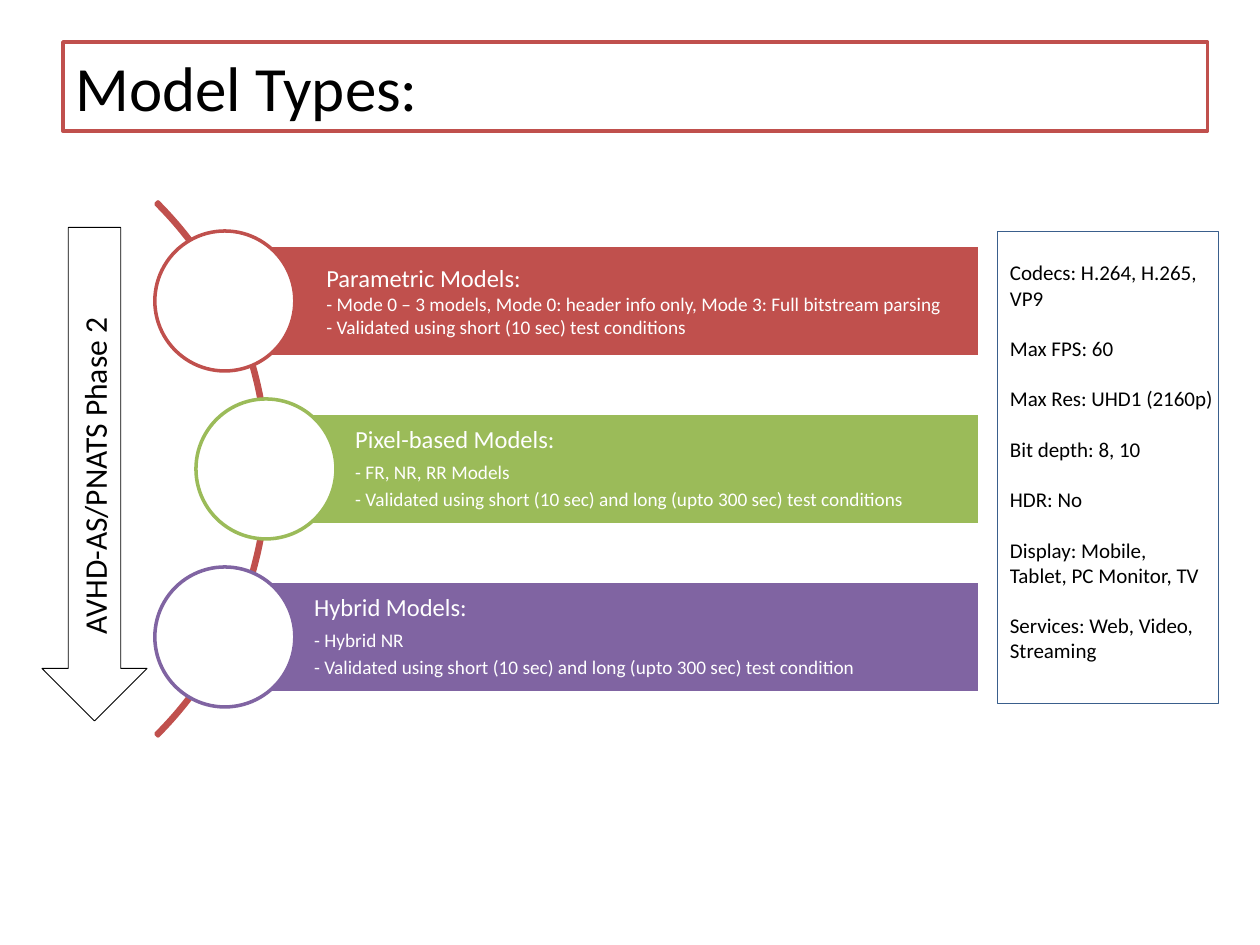
from dataclasses import dataclass

from pptx import Presentation
from pptx.dml.color import RGBColor
from pptx.enum import shapes, text
from pptx.util import Pt


@dataclass(frozen=True)
class Theme:
    font: str = "Calibri"
    black: str = "000000"
    white: str = "FFFFFF"
    red: str = "C0504D"
    green: str = "9BBB59"
    purple: str = "8064A2"
    navy: str = "3A5F8C"
    title: int = 36
    label: int = 18
    heading: int = 14
    facts: int = 12
    detail: int = 11


T = Theme()
SHAPE = shapes.MSO_SHAPE
ANCHOR = text.MSO_ANCHOR
ALIGN = text.PP_ALIGN


def style(sp, fill=None, line=None, width=2):
    """Set fill and outline; None means no fill."""
    if fill:
        sp.fill.solid()
        sp.fill.fore_color.rgb = RGBColor.from_string(fill)
    else:
        sp.fill.background()
    sp.line.color.rgb = RGBColor.from_string(line)
    sp.line.width = Pt(width)


def add_shape(s, kind, box, **look):
    sp = s.shapes.add_shape(kind, *map(Pt, box))
    sp.shadow.inherit = False
    style(sp, **look)
    return sp


def write(sp, lines, sizes, color=T.black, anchor=ANCHOR.TOP, align=ALIGN.LEFT,
          insets=(7.2, 3.6, 7.2, 3.6), spacing=1.0, before=0, after=0):
    """Write one paragraph per line; after is a share of the type size."""
    tf = sp.text_frame
    tf.word_wrap = True
    tf.auto_size = text.MSO_AUTO_SIZE.NONE
    tf.vertical_anchor = anchor
    tf.margin_left, tf.margin_top, tf.margin_right, tf.margin_bottom = map(Pt, insets)
    tf.text = "\n".join(lines)
    for i, (p, size) in enumerate(zip(tf.paragraphs, sizes)):
        p.alignment = align
        p.line_spacing = spacing
        p.space_before = Pt(before if i else 0)
        p.space_after = Pt(after * size)
        for r in p.runs:
            r.font.name = T.font
            r.font.size = Pt(size)
            r.font.color.rgb = RGBColor.from_string(color)


def title_bar(s, box, words):
    sp = s.shapes.title
    sp.left, sp.top, sp.width, sp.height = map(Pt, box)
    style(sp, fill=T.white, line=T.red)
    write(sp, [words], [T.title])


def phase_arrow(s, box, words):
    x, y, w, h = box
    add_shape(s, SHAPE.DOWN_ARROW, box, line=T.black, width=0.5)
    # The label is turned about the centre of the arrow
    length, depth = 197, 29
    label = s.shapes.add_textbox(Pt(x + (w - length) / 2), Pt(y + (h - depth) / 2),
                                 Pt(length), Pt(depth))
    label.rotation = 270
    write(label, [words], [T.label])


def model_list(s, box, models):
    x, y, w, h = box
    bar_h, circle, shift = 64, 80, 23.5
    pitch = (h - bar_h) / (len(models) - 1)

    # Arc behind the rows, centred on their height
    arc = add_shape(s, SHAPE.BLOCK_ARC, (x + 25 - w, y + (h - w) / 2, w, w), line=T.red)
    for i, value in enumerate((189, 27, 0.004)):
        arc.adjustments[i] = value

    # Bars, each with a circle centred on its left end
    for i, (color, lines, indent, spacing, after) in enumerate(models):
        left = x + shift * (i % 2)
        top = y + i * pitch
        bar = add_shape(s, SHAPE.RECTANGLE, (left, top, x + w - left, bar_h),
                        fill=color, line=T.white)
        write(bar, lines, [T.heading, T.detail, T.detail], color=T.white,
              anchor=ANCHOR.MIDDLE, insets=(indent, 3, 3, 3),
              spacing=spacing, after=after)
        add_shape(s, SHAPE.OVAL,
                  (left - circle / 2, top + (bar_h - circle) / 2, circle, circle),
                  fill=T.white, line=color)


def facts_box(s, box, facts):
    sp = add_shape(s, SHAPE.RECTANGLE, box, line=T.navy, width=0.25)
    write(sp, facts, [T.facts] * len(facts), insets=(7.2, 16.5, 0, 0), before=14.4)


MODELS = [
    (T.red, ["Parametric Models:",
             "- Mode 0 – 3 models, Mode 0: header info only, Mode 3: Full bitstream parsing",
             "- Validated using short (10 sec) test conditions"], 58, 1.0, 0),
    (T.green, ["Pixel-based Models:",
               "- FR, NR, RR Models",
               "- Validated using short (10 sec) and long (upto 300 sec) test conditions"],
     51, 0.9, 0.35),
    (T.purple, ["Hybrid Models:",
                "- Hybrid NR",
                "- Validated using short (10 sec) and long (upto 300 sec) test condition"],
     51, 0.9, 0.35),
]

# \v is a line break within a paragraph
FACTS = [
    "Codecs: H.264, H.265,\vVP9",
    "Max FPS: 60",
    "Max Res: UHD1 (2160p)",
    "Bit depth: 8, 10",
    "HDR: No",
    "Display: Mobile,\vTablet, PC Monitor, TV",
    "Services: Web, Video,\vStreaming",
]


def main():
    prs = Presentation()
    prs.slide_width, prs.slide_height = Pt(720), Pt(540)
    s = prs.slides.add_slide(prs.slide_layouts[5])
    title_bar(s, (36, 24, 654, 51), "Model Types:")
    model_list(s, (128.5, 140, 431.5, 256), MODELS)
    phase_arrow(s, (24, 130, 60, 282), "AVHD-AS/PNATS Phase 2")
    facts_box(s, (570, 132, 126, 270), FACTS)
    prs.save("out.pptx")


if __name__ == "__main__":
    main()
